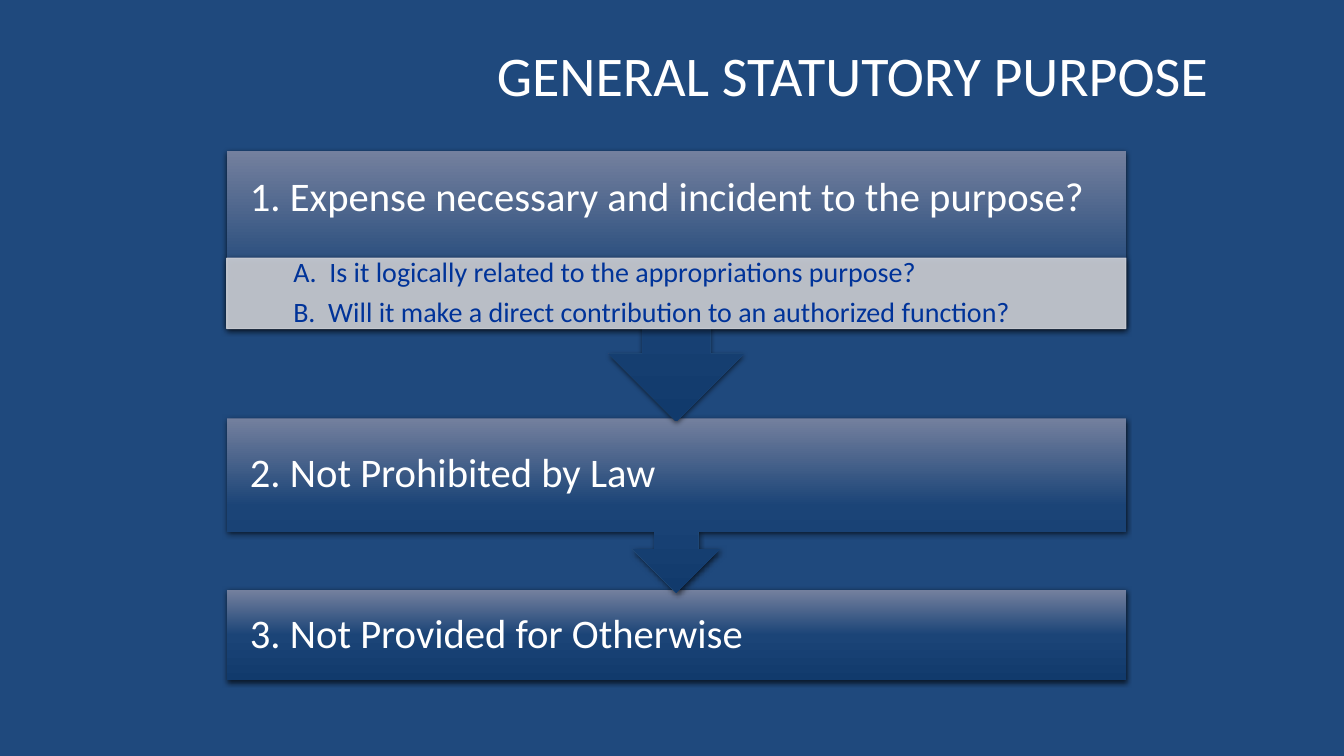
from lxml import etree
from pptx import Presentation
from pptx import util as u
from pptx.dml.color import RGBColor
from pptx.enum import shapes, text
from pptx.oxml.ns import qn

COLORS = {
    "background": "1F497D", "title": "FFFFFF", "step": "FFFFFF",
    "question": "003399", "band": "CDD0D7", "shadow": "000000",
    "top": "74809E", "middle": "1B4477", "bottom": "113A6C",
}
WIDTH, HEIGHT = u.Inches(13.33), u.Inches(7.5)
FONT = "Calibri"
STEP_LEFT, STEP_WIDTH = 16.87, 66.9
STEPS = [
    ("1. Expense necessary and incident to the purpose?", 20, 35.73, 12.53),
    ("2. Not Prohibited by Law", 55.33, 23.07, 14.93),
    ("3. Not Provided for Otherwise", 78, 12, 12),
]
QUESTIONS = [
    "A.  Is it logically related to the appropriations purpose?",
    "B.  Will it make a direct contribution to an authorized function?",
]
TEXT_STYLES = {
    "title": dict(size=40, spacing=0.85, after=0, margins=(0.1, 0.05), indent=0),
    "step": dict(size=29, spacing=0.9, after=10, margins=(0.23, 0.23), indent=0),
    "question": dict(size=20, spacing=0.9, after=7, margins=(0.16, 0.03), indent=0.5),
}


def place(box):
    """Turn a box in percent of the slide into lengths."""
    left, top, width, height = box
    return [round(share * side / 100) for share, side in
            ((left, WIDTH), (top, HEIGHT), (width, WIDTH), (height, HEIGHT))]


def set_all(target, values):
    """Set each attribute named in a dict."""
    for name, value in values.items():
        setattr(target, name, value)


def add_color(parent, color, alpha=None):
    """Append a colour element with an optional opacity in percent."""
    element = etree.SubElement(parent, qn("a:srgbClr"), val=COLORS[color])
    if alpha is not None:
        etree.SubElement(element, qn("a:alpha"), val=str(alpha * 1000))


def add_shadow(shape):
    """Give a shape a soft shadow that falls straight down."""
    shape.shadow.inherit = False
    effects = shape._element.spPr.find(qn("a:effectLst"))
    shadow = etree.SubElement(
        effects, qn("a:outerShdw"), blurRad=str(u.Pt(4)), dist=str(u.Pt(1.2)),
        dir="5400000", rotWithShape="0")
    add_color(shadow, "shadow", 68)


def add_words(slide, box, lines, kind):
    """Write lines of one text style, centred vertically in the box."""
    style = TEXT_STYLES[kind]
    frame = slide.shapes.add_textbox(*place(box)).text_frame
    across, down = (u.Inches(margin) for margin in style["margins"])
    set_all(frame, dict(
        word_wrap=True, vertical_anchor=text.MSO_ANCHOR.MIDDLE,
        margin_left=across, margin_right=across, margin_top=down, margin_bottom=down))
    for number, line in enumerate(lines):
        paragraph = frame.add_paragraph() if number else frame.paragraphs[0]
        set_all(paragraph, dict(
            text=line, alignment=text.PP_ALIGN.LEFT,
            line_spacing=style["spacing"], space_after=u.Pt(style["after"])))
        set_all(paragraph.font, dict(name=FONT, size=u.Pt(style["size"])))
        paragraph.font.color.rgb = RGBColor.from_string(COLORS[kind])
        properties = paragraph._p.get_or_add_pPr()
        properties.set("marL", str(u.Inches(style["indent"])))
        properties.set("indent", "0")


def add_step(slide, box, label, label_height):
    """Draw a shaded step, with an arrow below if it is taller than its label."""
    left, top, width, height = box
    kinds = shapes.MSO_SHAPE
    kind = kinds.DOWN_ARROW_CALLOUT if height > label_height else kinds.RECTANGLE
    step = slide.shapes.add_shape(kind, *place(box))
    step.fill.gradient()
    step.fill.gradient_angle = 270
    stops = step._element.spPr.find(qn("a:gradFill")).find(qn("a:gsLst"))
    for stop in list(stops):
        stops.remove(stop)
    for position, color in ((0, "top"), (50, "middle"), (100, "bottom")):
        add_color(etree.SubElement(stops, qn("a:gs"), pos=str(position * 1000)), color)
    step.line.fill.background()
    add_shadow(step)
    add_words(slide, (left, top, width, label_height), [label], "step")


def add_questions(slide, box):
    """Draw the pale band with the two questions of the first step."""
    band = slide.shapes.add_shape(shapes.MSO_SHAPE.RECTANGLE, *place(box))
    band.line.width = u.Pt(0.75)
    for fill in (band.fill, band.line.fill):
        fill.solid()
        fill.fore_color.rgb = RGBColor.from_string(COLORS["band"])
    for color in band._element.spPr.iter(qn("a:srgbClr")):
        etree.SubElement(color, qn("a:alpha"), val="90000")
    add_shadow(band)
    add_words(slide, box, QUESTIONS, "question")


def main():
    """Build the slide and save it."""
    deck = Presentation()
    set_all(deck, dict(slide_width=WIDTH, slide_height=HEIGHT))
    slide = deck.slides.add_slide(deck.slide_layouts[6])
    slide.background.fill.solid()
    slide.background.fill.fore_color.rgb = RGBColor.from_string(COLORS["background"])
    add_words(slide, (36.23, 2.2, 63.77, 16.67), ["GENERAL STATUTORY PURPOSE"], "title")
    for label, top, height, label_height in reversed(STEPS):
        add_step(slide, (STEP_LEFT, top, STEP_WIDTH, height), label, label_height)
    add_questions(slide, (STEP_LEFT, 34.13, STEP_WIDTH, 9.33))
    deck.save("out.pptx")


if __name__ == "__main__":
    main()
